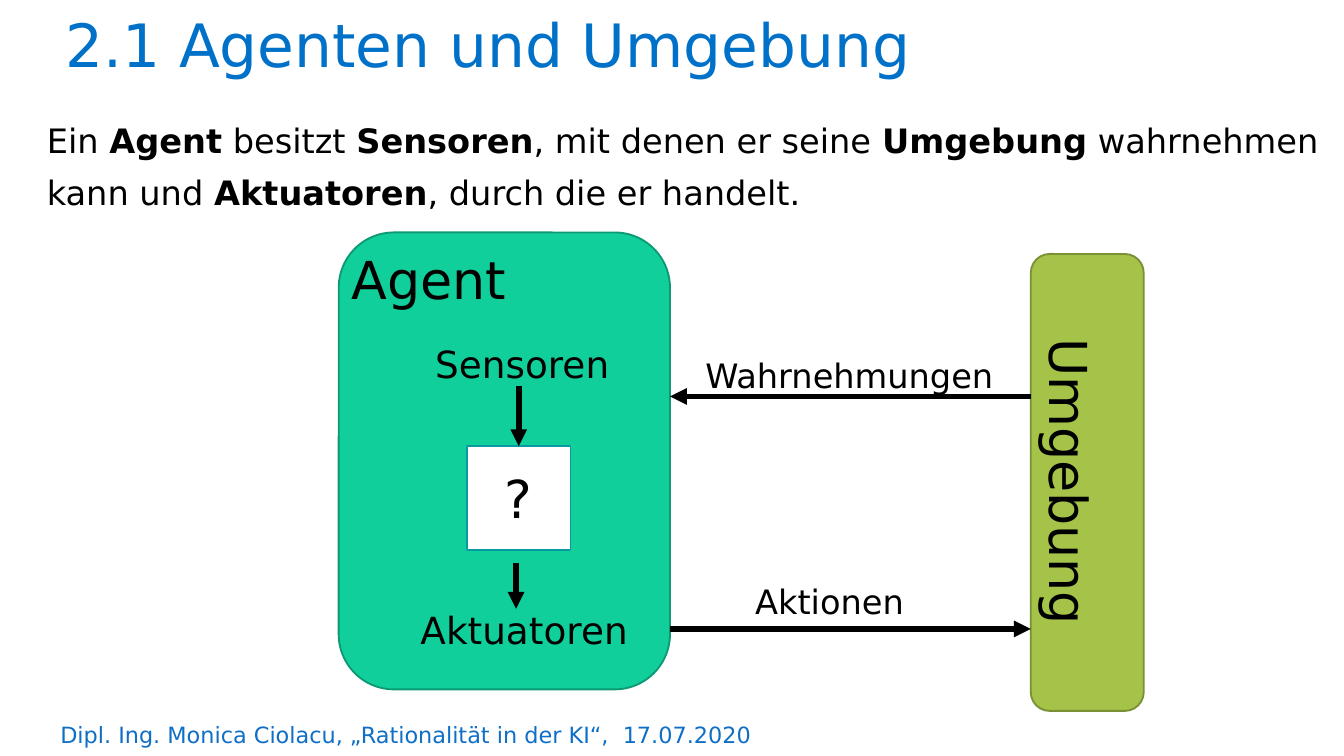
from lxml import etree
from pptx import Presentation
from pptx import util as u
from pptx.dml.color import RGBColor
from pptx.enum import shapes, text
from pptx.oxml.ns import qn

# The slide is a grid of square cells; all places are columns and rows.
CELL = u.Inches(0.1)
COLUMNS, ROWS = 100, 56.25

FONT = "DejaVu Sans"
BLACK = RGBColor(0x00, 0x00, 0x00)
WHITE = RGBColor(0xFF, 0xFF, 0xFF)
TITLE_BLUE = RGBColor(0x00, 0x71, 0xC8)
FOOTER_BLUE = RGBColor(0x0F, 0x6F, 0xC6)
AGENT_GREEN = RGBColor(0x10, 0xCF, 0x9B)
AGENT_EDGE = RGBColor(0x0C, 0x99, 0x73)
WORLD_GREEN = RGBColor(0xA5, 0xC2, 0x49)
WORLD_EDGE = RGBColor(0x7A, 0x90, 0x36)
QUESTION_EDGE = RGBColor(0x08, 0x9A, 0xA1)

AGENT_LEFT, AGENT_WIDTH = 25.2, 24.65
AGENT_RIGHT = AGENT_LEFT + AGENT_WIDTH
WORLD_LEFT = 76.7
BLOCK_HEIGHT = 34


def cells(*counts):
    return [round(count * CELL) for count in counts]


def write(frame, wording, size=18, color=BLACK, align=text.PP_ALIGN.LEFT,
          line_spacing=None, before=None):
    """Fill a text frame; parts between ** marks are bold."""
    paragraph = frame.paragraphs[0]
    paragraph.alignment = align
    if line_spacing:
        paragraph.line_spacing = line_spacing
    if before:
        paragraph.space_before = u.Pt(before)
    for index, part in enumerate(wording.split("**")):
        run = paragraph.add_run()
        run.text = part
        run.font.name = FONT
        run.font.size = u.Pt(size)
        run.font.bold = index % 2 == 1
        run.font.color.rgb = color


def add_label(slide, place, wording, wrap=True, vertical=False, inset=None, **look):
    frame = slide.shapes.add_textbox(*cells(*place)).text_frame
    frame.word_wrap = wrap
    if vertical:
        frame._txBody.bodyPr.set("vert", "vert")
    if inset:
        side, top = cells(*inset)
        frame.margin_left = frame.margin_right = side
        frame.margin_top = frame.margin_bottom = top
    write(frame, wording, **look)


def add_block(slide, kind, place, fill, edge):
    block = slide.shapes.add_shape(kind, *cells(*place))
    block.shadow.inherit = False
    block.fill.solid()
    block.fill.fore_color.rgb = fill
    block.line.color.rgb = edge
    block.line.width = u.Pt(1)
    return block


def add_arrow(slide, start, end):
    arrow = slide.shapes.add_connector(
        shapes.MSO_CONNECTOR.STRAIGHT, *cells(*start, *end))
    arrow.line.color.rgb = BLACK
    arrow.line.width = u.Pt(3)
    etree.SubElement(arrow.line._get_or_add_ln(), qn("a:tailEnd"), type="triangle")
    etree.SubElement(arrow._element.spPr, qn("a:effectLst"))
    return arrow


def add_agent(slide):
    add_block(slide, shapes.MSO_SHAPE.ROUNDED_RECTANGLE,
              (AGENT_LEFT, 17.3, AGENT_WIDTH, BLOCK_HEIGHT), AGENT_GREEN, AGENT_EDGE)
    add_label(slide, (AGENT_LEFT, 17.9, 14.2, 5.7), "Agent", size=28)
    add_label(slide, (31.4, 24.9, 16.7, 4.4), "Sensoren", size=20)
    add_label(slide, (30.3, 44.7, 21.1, 4.4), "Aktuatoren", size=20)

    question = add_block(slide, shapes.MSO_SHAPE.RECTANGLE,
                         (34.75, 33.2, 7.7, 7.7), WHITE, QUESTION_EDGE)
    question.text_frame.vertical_anchor = text.MSO_ANCHOR.MIDDLE
    write(question.text_frame, "?", size=28, align=text.PP_ALIGN.CENTER)

    add_arrow(slide, (38.6, 28.7), (38.6, 33.2)).end_connect(question, 0)
    add_arrow(slide, (38.4, 41.9), (38.4, 45.3))


def add_environment(slide):
    add_block(slide, shapes.MSO_SHAPE.ROUNDED_RECTANGLE,
              (WORLD_LEFT, 18.9, 8.4, BLOCK_HEIGHT), WORLD_GREEN, WORLD_EDGE)
    add_label(slide, (75.8, 24.2, 6.7, 22.4), "Umgebung",
              size=28, wrap=False, vertical=True)


def add_exchange(slide):
    add_label(slide, (51.5, 25.9, 23.7, 4), "Wahrnehmungen")
    add_arrow(slide, (WORLD_LEFT, 29.5), (AGENT_RIGHT, 29.5))
    add_label(slide, (55.2, 42.7, 13.2, 4), "Aktionen", wrap=False)
    add_arrow(slide, (AGENT_RIGHT, 46.8), (WORLD_LEFT, 46.8))


def main():
    deck = Presentation()
    deck.slide_width, deck.slide_height = cells(COLUMNS, ROWS)
    slide = deck.slides.add_slide(deck.slide_layouts[6])

    add_label(slide, (3.5, 53.2, 61.5, 3),
              "Dipl. Ing. Monica Ciolacu, „Rationalität in der KI“,  17.07.2020",
              size=12, color=FOOTER_BLUE)
    add_label(slide, (4.1, 0.8, 94.5, 6.9), "2.1 Agenten und Umgebung",
              size=32, color=TITLE_BLUE, inset=(0.75, 0.4),
              line_spacing=0.9, before=7.5)
    add_agent(slide)
    add_environment(slide)
    add_exchange(slide)
    add_label(slide, (2.5, 7.5, 97.5, 9.8),
              "Ein **Agent** besitzt **Sensoren**, mit denen er seine **Umgebung** "
              "wahrnehmen kann und **Aktuatoren**, durch die er handelt.",
              line_spacing=1.3, before=7.5)

    deck.save("out.pptx")


if __name__ == "__main__":
    main()
